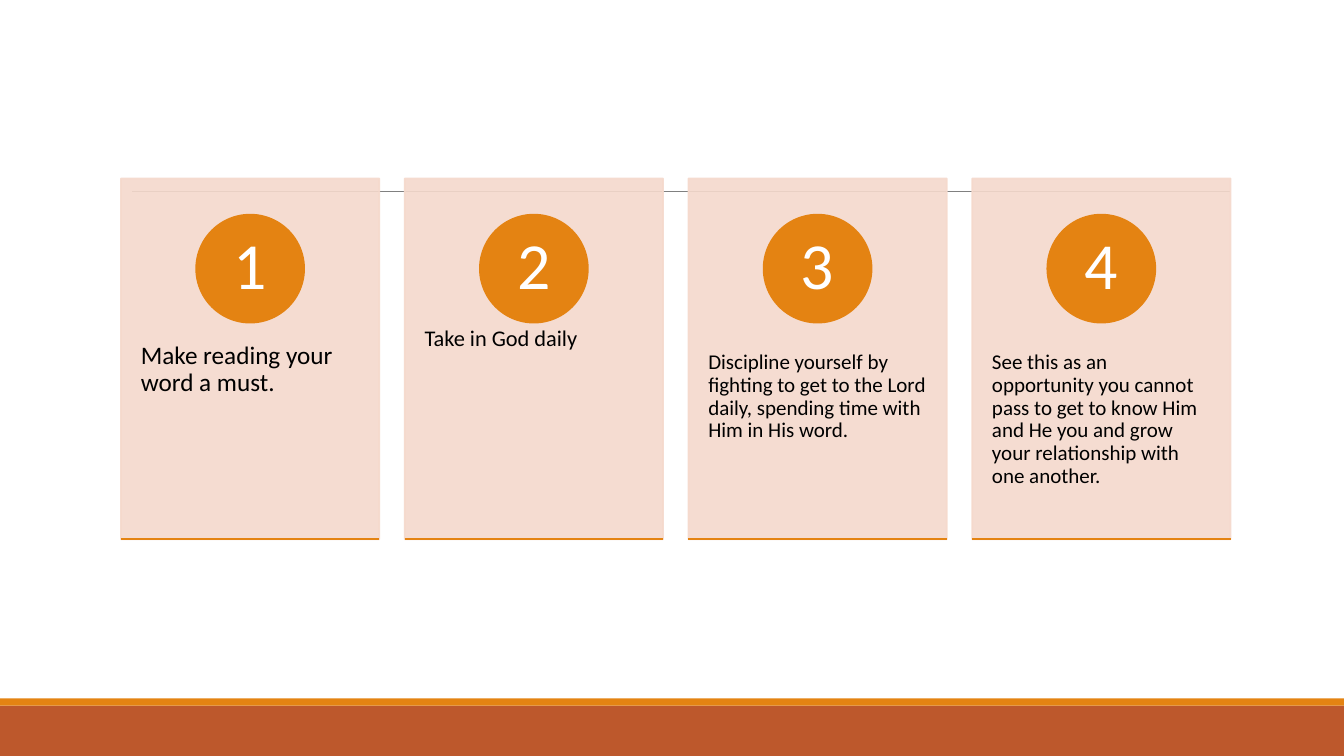
from lxml import etree
from pptx import Presentation
from pptx.dml.color import RGBColor
from pptx.enum.shapes import MSO_CONNECTOR, MSO_SHAPE
from pptx.enum.text import MSO_ANCHOR, PP_ALIGN
from pptx.oxml.ns import qn
from pptx.util import Cm, Pt

RECTANGLE, OVAL = MSO_SHAPE.RECTANGLE, MSO_SHAPE.OVAL
STRAIGHT = MSO_CONNECTOR.STRAIGHT
LEFT, CENTER = PP_ALIGN.LEFT, PP_ALIGN.CENTER
TOP, MIDDLE = MSO_ANCHOR.TOP, MSO_ANCHOR.MIDDLE
ORANGE, RUST, PINK, GRAY = "E48312", "BD582C", "F5D9CC", "808080"
BLACK, WHITE = "000000", "FFFFFF"


def paint(shape, color, line_width=0, opacity=100):
    """Colour a shape's outline and, unless it is a connector, its fill."""
    properties = shape._element.spPr
    if hasattr(shape, "fill"):
        shape.shadow.inherit = False
        shape.fill.solid()
        shape.fill.fore_color.rgb = RGBColor.from_string(color)
    else:
        etree.SubElement(properties, qn("a:effectLst"))
    if line_width:
        shape.line.width = Pt(line_width)
        shape.line.color.rgb = RGBColor.from_string(color)
    else:
        shape.line.fill.background()
    if opacity < 100:
        for tint in properties.iter(qn("a:srgbClr")):
            etree.SubElement(tint, qn("a:alpha"), val=str(opacity * 1000))


def write(box, text, size, color, align=LEFT, anchor=TOP, inset_x=0.5, inset_y=0.91):
    frame = box.text_frame
    frame.word_wrap = True
    frame.vertical_anchor = anchor
    frame.margin_left = frame.margin_right = Cm(inset_x)
    frame.margin_top = frame.margin_bottom = Cm(inset_y)
    para = frame.paragraphs[0]
    para.alignment = align
    para.line_spacing = 0.9
    span = para.add_run()
    span.text = text
    span.font.name = "Calibri"
    span.font.size = Pt(size)
    span.font.color.rgb = RGBColor.from_string(color)


deck = Presentation()
deck.slide_width, deck.slide_height = Cm(33.87), Cm(19.05)
page = deck.slides.add_slide(deck.slide_layouts[6])
shapes = page.shapes

# Footer bands
for top, height, color in [(17.78, 1.27, RUST), (17.6, 0.18, ORANGE)]:
    band = shapes.add_shape(RECTANGLE, 0, Cm(top), deck.slide_width, Cm(height))
    paint(band, color)

# Thin rule running behind the cards
rule = shapes.add_connector(STRAIGHT, Cm(3.33), Cm(4.82), Cm(31), Cm(4.82))
paint(rule, GRAY, line_width=0.5)

# Numbered cards: text and its size
steps = [
    ("Make reading your word a must.", 18),
    ("Take in God daily", 16),
    ("Discipline yourself by fighting to get to the Lord daily, "
     "spending time with Him in His word.", 15),
    ("See this as an opportunity you cannot pass to get to know Him "
     "and He you and grow your relationship with one another.", 15),
]
card_left, card_top, card_width, card_height = 3.05, 4.5, 6.51, 9.09
card_pitch = 7.15
badge_size = 2.72
card_bottom = card_top + card_height

for index, (text, size) in enumerate(steps):
    left = card_left + index * card_pitch

    card = shapes.add_shape(RECTANGLE, Cm(left), Cm(card_top), Cm(card_width), Cm(card_height))
    paint(card, PINK, line_width=1.25, opacity=90)

    box = shapes.add_textbox(Cm(left), Cm(7.95), Cm(card_width), Cm(5.46))
    write(box, text, size, BLACK)

    badge_left = left + (card_width - badge_size) / 2
    badge = shapes.add_shape(OVAL, Cm(badge_left), Cm(5.41), Cm(badge_size), Cm(badge_size))
    paint(badge, ORANGE, line_width=1.25)
    write(badge, str(index + 1), 47, WHITE, CENTER, MIDDLE, inset_x=0.2, inset_y=0.03)

    base = shapes.add_connector(STRAIGHT, Cm(left), Cm(card_bottom),
                                Cm(left + card_width), Cm(card_bottom))
    paint(base, ORANGE, line_width=1.25)

deck.save("out.pptx")
